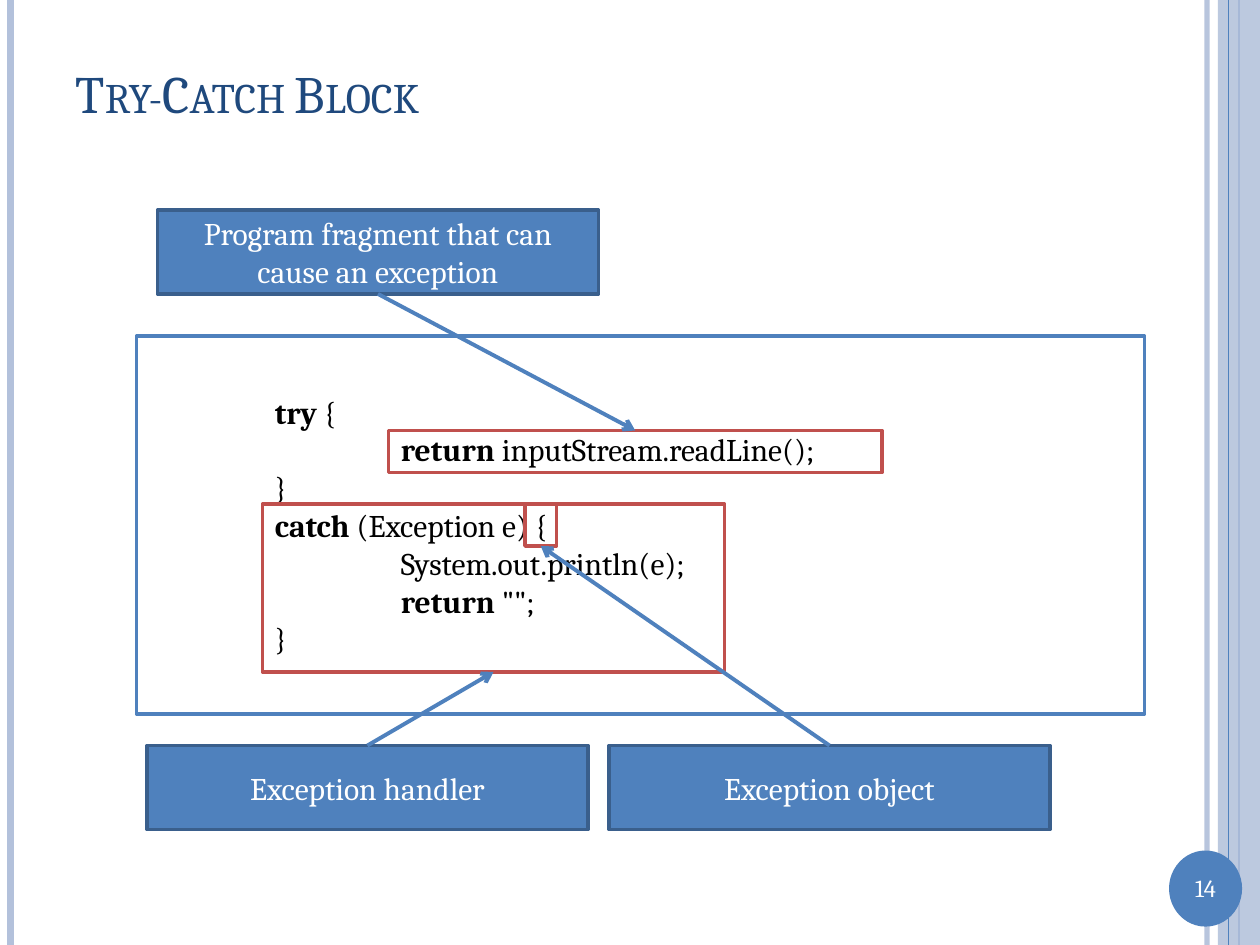
from lxml.etree import SubElement
from pptx import Presentation
from pptx.dml.color import RGBColor
from pptx.enum.shapes import MSO_CONNECTOR as Connector, MSO_SHAPE as Shape
from pptx.enum.text import MSO_ANCHOR as Anchor, PP_ALIGN as Align
from pptx.oxml.ns import qn
from pptx.util import Pt

WIDTH, HEIGHT = 720, 540
BLUE, DARK_BLUE, PALE, RED = "4F81BD", "3A5F8C", "B3C1DB", "C0504D"
WHITE, BLACK, NAVY = "FFFFFF", "000000", "1F497D"
TOP, BOTTOM = 0, 2
TAB = 72

# Each code line: indent level, then (text, bold) pieces
CODE = [
    (1, [("try", True), (" {", False)]),
    (2, [("return ", True), ("inputStream.readLine();", False)]),
    (1, [("}", False)]),
    (1, [("catch", True), (" (Exception e) {", False)]),
    (2, [("System.out.println(e);", False)]),
    (2, [("return", True), (' "";', False)]),
    (1, [("}", False)]),
]


def paint(color_format, color, alpha=None):
    color_format.rgb = RGBColor.from_string(color)
    if alpha:
        choice = color_format._xFill.find(qn("a:srgbClr"))
        SubElement(choice, qn("a:alpha")).set("val", str(alpha * 1000))


def apply(target, formats):
    for name, value in formats.items():
        setattr(target, name, value)


def place(target, left, top, width, height):
    box = dict(left=left, top=top, width=width, height=height)
    apply(target, {name: Pt(value) for name, value in box.items()})


def write(paragraph, text, color, size=18, bold=False):
    run = paragraph.add_run()
    run.text = text
    apply(run.font, {"name": "Cambria", "size": Pt(size), "bold": bold})
    paint(run.font.color, color)
    return run


def add_box(slide, box, fill=None, line=None, kind=Shape.RECTANGLE, alpha=None):
    shape = slide.shapes.add_shape(kind, *map(Pt, box))
    shape.shadow.inherit = False
    if fill:
        shape.fill.solid()
        paint(shape.fill.fore_color, fill, alpha)
    else:
        shape.fill.background()
    if line:
        shape.line.width = Pt(2)
        paint(shape.line.color, line)
    else:
        shape.line.fill.background()
    return shape


def add_label(slide, left, top, text):
    label = add_box(slide, (left, top, 252, 48), BLUE, DARK_BLUE)
    apply(label.text_frame, {"word_wrap": True, "vertical_anchor": Anchor.MIDDLE})
    paragraph = label.text_frame.paragraphs[0]
    paragraph.alignment = Align.CENTER
    write(paragraph, text, WHITE)
    return label


def add_line(slide, color, width, start=(0, 0), end=(0, 0), alpha=None):
    line = slide.shapes.add_connector(Connector.STRAIGHT, *map(Pt, start + end))
    line.line.width = Pt(width)
    paint(line.line.color, color, alpha)
    SubElement(line._element.spPr, qn("a:effectLst"))
    return line


def add_arrow(slide, label, label_side, target, target_side):
    arrow = add_line(slide, BLUE, 2.25)
    arrow.begin_connect(label, label_side)
    arrow.end_connect(target, target_side)
    SubElement(arrow.line._get_or_add_ln(), qn("a:tailEnd")).set("type", "arrow")


def add_rule(slide, x, color, width, alpha=None):
    add_line(slide, color, width, (x, 0), (x, HEIGHT), alpha)


def add_decor(slide):
    add_rule(slide, 689.75, PALE, 3, alpha=93)
    add_rule(slide, 6, PALE, 4.5)
    add_rule(slide, 708, BLUE, 1.5)
    add_box(slide, (696, 0, 24, HEIGHT), PALE, alpha=87)
    add_rule(slide, 702, BLUE, 0.75)
    # Page number on its disc
    add_box(slide, (668, 486, 41.75, 43.5), BLUE, kind=Shape.OVAL)
    number = slide.shapes.add_textbox(*map(Pt, (668, 495.5, 41.75, 24.5)))
    number.text_frame.word_wrap = True
    paragraph = number.text_frame.paragraphs[0]
    paragraph.alignment = Align.CENTER
    write(paragraph, "14", WHITE, 14)


def add_title(slide, text):
    title = slide.shapes.title
    place(title, 36, 21.6, 660, 62.5)
    title.text_frame.vertical_anchor = Anchor.MIDDLE
    paragraph = title.text_frame.paragraphs[0]
    paragraph.alignment = Align.LEFT
    run = write(paragraph, text, NAVY, 30)
    run.font._element.set("cap", "small")


def add_code(slide):
    panel = add_box(slide, (78, 192, 576, 216), WHITE, BLUE)
    frame = panel.text_frame
    apply(frame, {"word_wrap": True, "vertical_anchor": Anchor.MIDDLE})
    for index, (level, pieces) in enumerate(CODE):
        paragraph = frame.add_paragraph() if index else frame.paragraphs[0]
        paragraph.alignment = Align.LEFT
        paragraph._p.get_or_add_pPr().set("marL", str(Pt(level * TAB)))
        for text, bold in pieces:
            write(paragraph, text, BLACK, bold=bold)


def main():
    deck = Presentation()
    apply(deck, {"slide_width": Pt(WIDTH), "slide_height": Pt(HEIGHT)})
    slide = deck.slides.add_slide(deck.slide_layouts[5])
    add_decor(slide)
    add_title(slide, "Try-Catch Block")
    add_code(slide)

    # Red frames around the explained parts of the code
    fragment = add_box(slide, (222, 246, 282, 24), line=RED)
    handler = add_box(slide, (150, 288, 264, 96), line=RED)
    exception = add_box(slide, (300, 288, 18, 24), line=RED)

    # Labels, each with an arrow to its frame
    fragment_label = add_label(
        slide, 90, 120, "Program fragment that can cause an exception")
    handler_label = add_label(slide, 84, 426, "Exception handler")
    exception_label = add_label(slide, 348, 426, "Exception object")
    add_arrow(slide, fragment_label, BOTTOM, fragment, TOP)
    add_arrow(slide, handler_label, TOP, handler, BOTTOM)
    add_arrow(slide, exception_label, TOP, exception, BOTTOM)

    deck.save("out.pptx")


if __name__ == "__main__":
    main()
